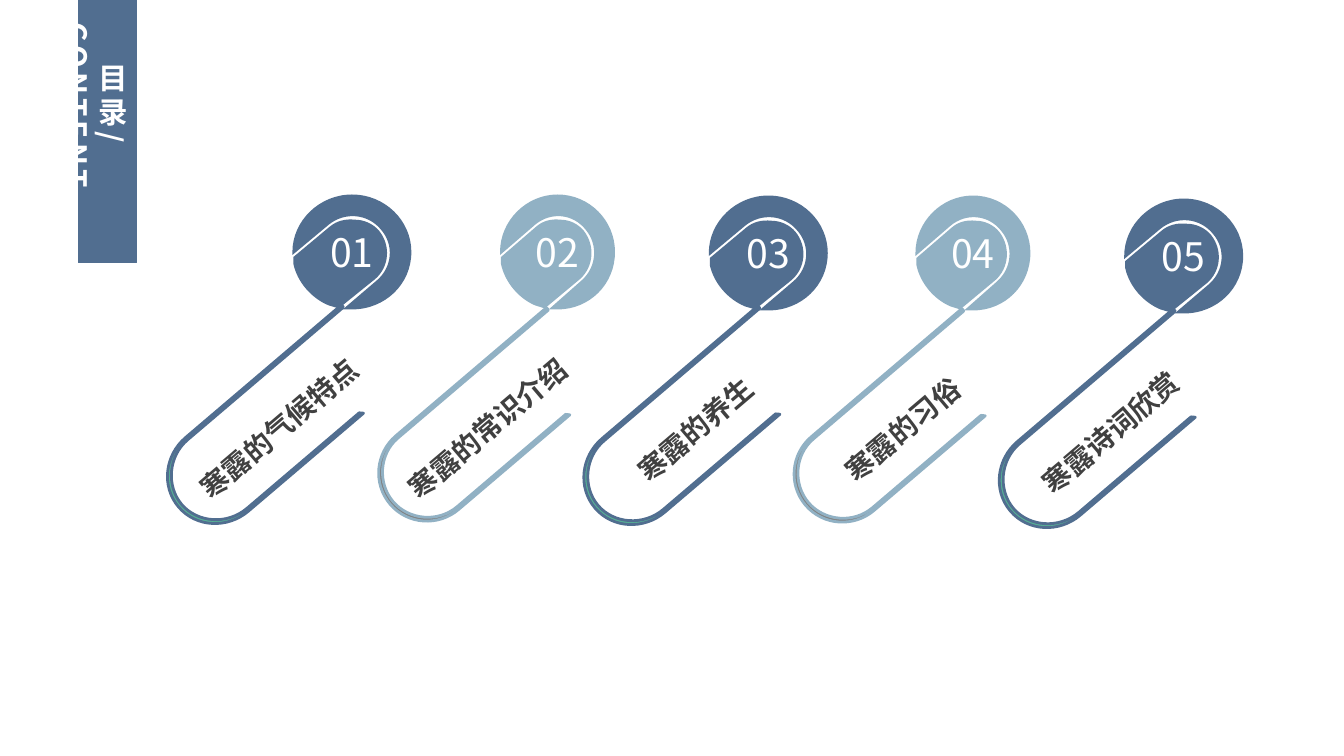
from lxml import etree
from pptx import Presentation
from pptx import util as u
from pptx.dml.color import RGBColor
from pptx.enum import shapes, text
from pptx.oxml.ns import qn

PX = 9144
FONT = "Noto Sans CJK SC"
HUES = {"navy": "516E90", "sky": "91B1C4", "green": "57B395",
        "gray": "808080", "ink": "404040", "white": "FFFFFF"}
ITEMS = [
    ("寒露的气候特点", 290, 193),
    ("寒露的常识介绍", 496, 193),
    ("寒露的养生", 703, 194),
    ("寒露的习俗", 908, 194),
    ("寒露诗词欣赏", 1115, 197),
]
TONES = [("navy", "green", 118), ("sky", "gray", 114)]
WIDE = 118
TILT = 319.6

LOOP = [
    [(62, 25)], [(71, 25), (80, 29), (86, 36)],
    [(98, 51), (96, 72), (82, 84)], [(46, 113)], [(36, 110)],
    [(19, 103), (5, 87), (1, 69)], [(1, 62)], [(37, 32)],
    [(44, 26), (53, 24), (62, 25)],
]
RIM = [
    [(59, 0)], [(92, 0), (118, 26), (118, 57)],
    [(118, 89), (92, 114), (59, 114)], [(50, 114)], [(84, 85)],
    [(99, 72), (101, 50), (88, 35)], [(75, 19), (52, 17), (36, 30)],
    [(0, 60)], [(0, 57)], [(0, 26), (27, 0), (59, 0)],
]
HOOK = [
    [(200, 96)], [(197, 93)], [(51, 93)],
    [(25, 93), (4, 72), (4, 48)], [(4, 24), (25, 3), (50, 3)],
    [(253, 3)], [(253, 0)], [(50, 0)],
    [(23, 0), (0, 21), (0, 48)], [(0, 75), (23, 96), (50, 96)],
]


def color(name):
    return RGBColor.from_string(HUES[name])


def paint(shape, fill, line=None, width=1):
    shape.shadow.inherit = False
    shape.fill.solid()
    shape.fill.fore_color.rgb = color(fill)
    if line:
        shape.line.color.rgb = color(line)
        shape.line.width = u.Pt(width)
    else:
        shape.line.fill.background()


def write(shape, words, size, hue="white", bold=False, lead=None, gap=0):
    frame = shape.text_frame
    frame.word_wrap = True
    frame.vertical_anchor = text.MSO_ANCHOR.MIDDLE
    para = frame.paragraphs[0]
    para.alignment = text.PP_ALIGN.CENTER
    if lead:
        para.line_spacing = lead
    run = para.add_run()
    run.text = words
    font = run.font
    font.size, font.bold, font.name = u.Pt(size), bold, FONT
    font.color.rgb = color(hue)
    props = run._r.get_or_add_rPr()
    etree.SubElement(props, qn("a:ea")).set("typeface", FONT)
    if gap:
        props.set("spc", str(gap * 100))
    return frame


def bend(shape, rings):
    lines = iter(list(shape._element.iter(qn("a:lnTo"))))
    for step in (step for ring in rings for step in ring[1:]):
        parts = [next(lines) for _ in step]
        if len(parts) == 3:
            curve = etree.Element(qn("a:cubicBezTo"))
            parts[0].addprevious(curve)
            for part in parts:
                curve.append(part[0])
                part.getparent().remove(part)


def outline(slide, left, top, ratio, *rings):
    pen = None
    for ring in rings:
        dots = [(round((left + x * ratio) * PX), (top + y) * PX)
                for step in ring for x, y in step]
        if pen is None:
            pen = slide.shapes.build_freeform(*dots[0], scale=1.0)
        else:
            pen.move_to(*dots[0])
        pen.add_line_segments(dots[1:], close=True)
    shape = pen.convert_to_shape()
    bend(shape, rings)
    return shape


def banner(slide, left, top, width, height):
    mid, half = left + width // 2, top + height // 2
    bar = slide.shapes.add_shape(
        shapes.MSO_SHAPE.RECTANGLE, (mid - height // 2) * PX,
        (half - width // 2) * PX, height * PX, width * PX)
    bar.rotation = 90
    paint(bar, "navy", "navy")
    box = slide.shapes.add_textbox(
        (left - 34) * PX, (top + 13) * PX, 91 * PX, 246 * PX)
    frame = write(box, "目录/CONTENT", 21, bold=True, gap=3)
    frame.vertical_anchor = text.MSO_ANCHOR.TOP
    frame.auto_size = text.MSO_AUTO_SIZE.SHAPE_TO_FIT_TEXT
    frame._txBody.bodyPr.set("vert", "eaVert")


def entry(slide, left, top, number, words):
    hue, core, width = TONES[(number - 1) % 2]
    ratio = width / WIDE
    disc = outline(slide, left, top, ratio, LOOP, RIM)
    paint(disc, hue)
    write(disc, f"{number:02}", 28)
    hook = outline(slide, left - 143 * ratio, top + 180, ratio, HOOK)
    paint(hook, core, hue, 2)
    hook.rotation = TILT
    write(hook, words, 20, hue="ink", bold=True, lead=1.3)


def main():
    deck = Presentation()
    deck.slide_width, deck.slide_height = 1333 * PX, 750 * PX
    slide = deck.slides.add_slide(deck.slide_layouts[6])
    banner(slide, 77, 0, 58, 261)
    for number, (words, left, top) in enumerate(ITEMS, 1):
        entry(slide, left, top, number, words)
    deck.save("out.pptx")


if __name__ == "__main__":
    main()
